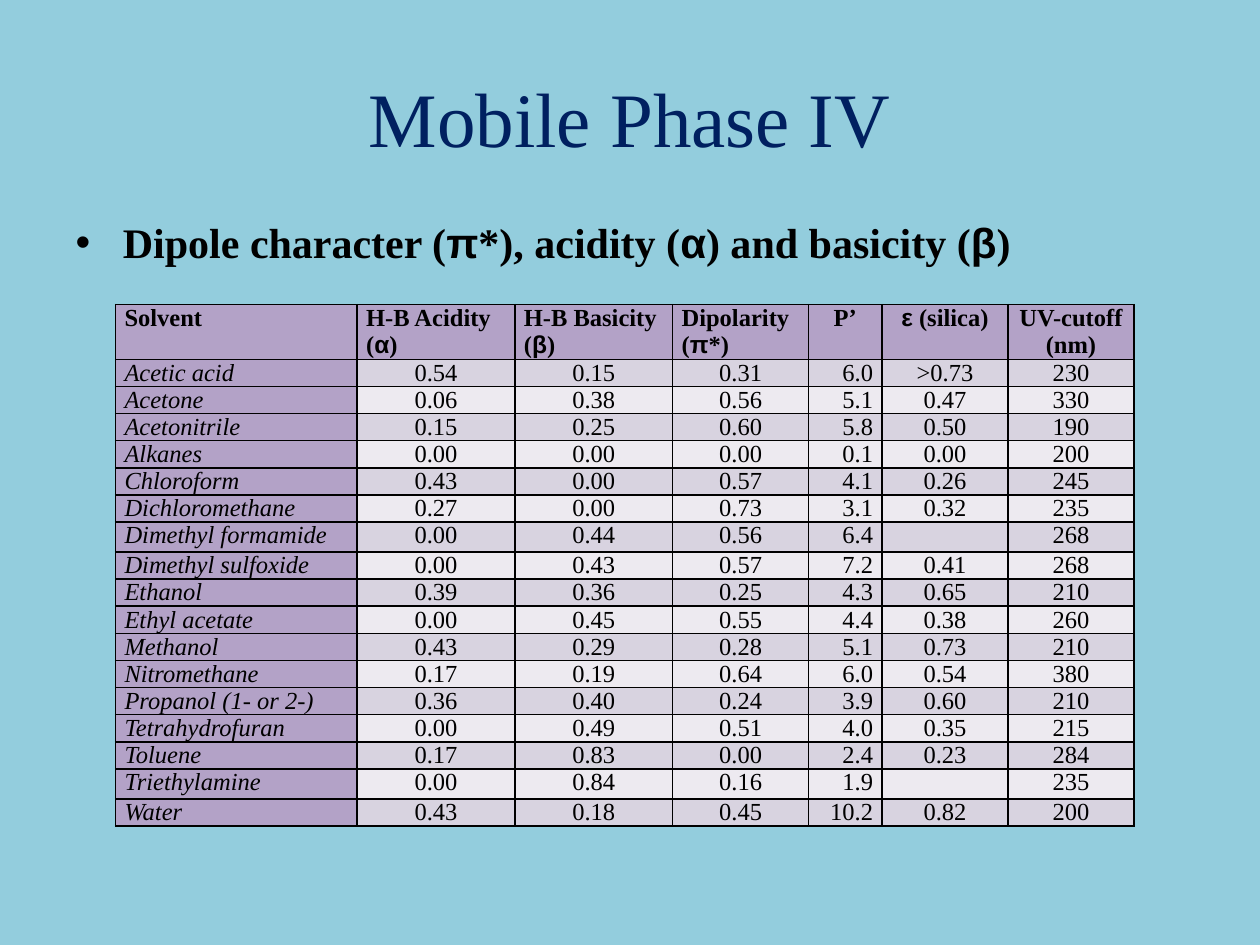
from dataclasses import dataclass
from itertools import groupby

from lxml import etree
from pptx import Presentation
from pptx import util as u
from pptx.dml.color import RGBColor
from pptx.enum import text
from pptx.oxml import ns


@dataclass
class Theme:
    background: str = "93CDDD"
    title: str = "002060"
    ink: str = "000000"
    heading_fill: str = "B3A2C7"
    bands: tuple = ("D8D3E0", "EDEAF0")
    font: str = "Times New Roman"
    greek_font: str = "Arial"
    title_size: int = 44
    body_size: int = 24
    table_size: int = 14


theme = Theme()
LEFT, CENTER, RIGHT = text.PP_ALIGN.LEFT, text.PP_ALIGN.CENTER, text.PP_ALIGN.RIGHT


def add_runs(paragraph, words, size, color=theme.ink, bold=False, italic=False):
    """Write words run by run, with Greek letters in their own font."""
    for greek, letters in groupby(words, lambda letter: "α" <= letter <= "ω"):
        run = paragraph.add_run()
        run.text = "".join(letters)
        run.font.name = theme.greek_font if greek else theme.font
        run.font.size = u.Pt(size)
        run.font.bold = bold
        run.font.italic = italic
        run.font.color.rgb = RGBColor.from_string(color)


def add_borders(cell):
    """Draw a thin line on all four sides of a cell."""
    properties = cell._tc.get_or_add_tcPr()
    for position, side in enumerate(("lnL", "lnR", "lnT", "lnB")):
        line = etree.Element(ns.qn(f"a:{side}"), w=str(u.Pt(1)))
        fill = etree.SubElement(line, ns.qn("a:solidFill"))
        etree.SubElement(fill, ns.qn("a:srgbClr"), val=theme.ink)
        properties.insert(position, line)


# Slide and background
presentation = Presentation()
presentation.slide_width, presentation.slide_height = u.Cm(25.4), u.Cm(19.05)
slide = presentation.slides.add_slide(presentation.slide_layouts[1])
slide.background.fill.solid()
slide.background.fill.fore_color.rgb = RGBColor.from_string(theme.background)

# Title
title = slide.shapes.title
title.left, title.top, title.width, title.height = u.Cm(1.27), u.Cm(0.76), u.Cm(22.86), u.Cm(3.18)
title.text_frame.vertical_anchor = text.MSO_ANCHOR.MIDDLE
paragraph = title.text_frame.paragraphs[0]
paragraph.alignment = CENTER
add_runs(paragraph, "Mobile Phase IV", theme.title_size, theme.title)

# Bulleted line
body = slide.placeholders[1]
body.left, body.top, body.width, body.height = u.Cm(1.27), u.Cm(4.24), u.Cm(22.86), u.Cm(13.97)
add_runs(body.text_frame.paragraphs[0],
         "Dipole character (π*), acidity (α) and basicity (β)", theme.body_size, bold=True)

# Solvent data
headings = ("Solvent", "H-B Acidity (α)", "H-B Basicity (β)", "Dipolarity (π*)",
            "P’", "ε (silica)", "UV-cutoff\n(nm)")
solvents = [
    ("Acetic acid", "0.54", "0.15", "0.31", "6.0", ">0.73", "230"),
    ("Acetone", "0.06", "0.38", "0.56", "5.1", "0.47", "330"),
    ("Acetonitrile", "0.15", "0.25", "0.60", "5.8", "0.50", "190"),
    ("Alkanes", "0.00", "0.00", "0.00", "0.1", "0.00", "200"),
    ("Chloroform", "0.43", "0.00", "0.57", "4.1", "0.26", "245"),
    ("Dichloromethane", "0.27", "0.00", "0.73", "3.1", "0.32", "235"),
    ("Dimethyl formamide", "0.00", "0.44", "0.56", "6.4", "", "268"),
    ("Dimethyl sulfoxide", "0.00", "0.43", "0.57", "7.2", "0.41", "268"),
    ("Ethanol", "0.39", "0.36", "0.25", "4.3", "0.65", "210"),
    ("Ethyl acetate", "0.00", "0.45", "0.55", "4.4", "0.38", "260"),
    ("Methanol", "0.43", "0.29", "0.28", "5.1", "0.73", "210"),
    ("Nitromethane", "0.17", "0.19", "0.64", "6.0", "0.54", "380"),
    ("Propanol (1- or 2-)", "0.36", "0.40", "0.24", "3.9", "0.60", "210"),
    ("Tetrahydrofuran", "0.00", "0.49", "0.51", "4.0", "0.35", "215"),
    ("Toluene", "0.17", "0.83", "0.00", "2.4", "0.23", "284"),
    ("Triethylamine", "0.00", "0.84", "0.16", "1.9", "", "235"),
    ("Water", "0.43", "0.18", "0.45", "10.2", "0.82", "200"),
]
widths = (4.87, 3.18, 3.18, 2.74, 1.48, 2.54, 2.54)
heading_alignments = (LEFT,) * 4 + (CENTER,) * 3
value_alignments = (LEFT, CENTER, CENTER, CENTER, RIGHT, CENTER, CENTER)

# Table grid
rows = [headings] + solvents
row_height = 0.54
table = slide.shapes.add_table(len(rows), len(headings), u.Cm(2.33), u.Cm(6.14),
                               u.Cm(sum(widths)), u.Cm(row_height * (len(rows) + 1))).table
for column, width in zip(table.columns, widths):
    column.width = u.Cm(width)
for row_index, row in enumerate(table.rows):
    row.height = u.Cm(row_height if row_index else 2 * row_height)

# Table cells
for row_index, values in enumerate(rows):
    is_heading = row_index == 0
    alignments = heading_alignments if is_heading else value_alignments
    for column_index, value in enumerate(values):
        cell = table.cell(row_index, column_index)
        cell.margin_left = cell.margin_right = u.Cm(0.18)
        cell.margin_top = cell.margin_bottom = 0
        is_plain = not is_heading and column_index > 0
        color = theme.bands[(row_index - 1) % 2] if is_plain else theme.heading_fill
        cell.fill.solid()
        cell.fill.fore_color.rgb = RGBColor.from_string(color)
        add_borders(cell)
        for line_index, line in enumerate(value.split("\n")):
            frame = cell.text_frame
            paragraph = frame.add_paragraph() if line_index else frame.paragraphs[0]
            paragraph.alignment = alignments[column_index]
            add_runs(paragraph, line, theme.table_size, bold=is_heading,
                     italic=not is_heading and column_index == 0)
            if not line:  # keeps the empty cell from stretching its row
                etree.SubElement(paragraph._p, ns.qn("a:endParaRPr"),
                                 sz=str(theme.table_size * 100))

presentation.save("out.pptx")
